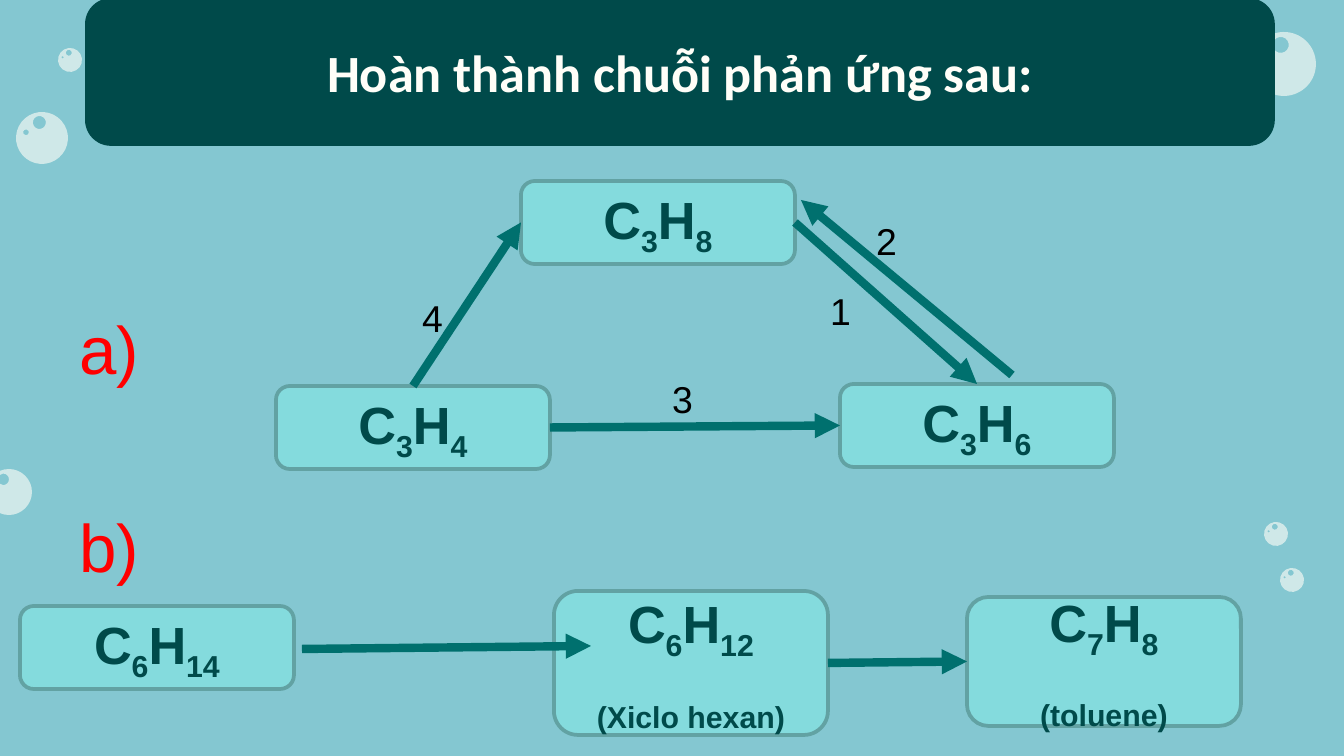
from dataclasses import dataclass
from itertools import groupby

from lxml import etree
from pptx import Presentation
from pptx import util as u
from pptx.dml.color import RGBColor
from pptx.enum import shapes, text
from pptx.oxml.ns import qn

WIDTH, HEIGHT = 1344, 756
SCALE = u.Inches(10) / WIDTH
TOP, LEFT, RIGHT = 0, 1, 3  # connection sites of a rectangle
BOX_WIDTH, BOX_HEIGHT = 274, 83


@dataclass(frozen=True)
class Theme:
    water: str = "84C7D1"
    foam: str = "FFFEF8"
    dark: str = "004A4A"
    box: str = "84DBDD"
    box_edge: str = "62A2A3"
    arrow: str = "00706E"
    number: str = "000000"
    letter: str = "FF0000"
    heading_font: str = "Calibri"
    body_font: str = "Arial"
    formula_size: int = 28
    number_size: int = 20
    letter_size: int = 36
    edge_width: int = 2
    arrow_width: float = 4.5


THEME = Theme()


def px(length):
    return u.Emu(round(length * SCALE))


def paint(color, hex_color):
    color.rgb = RGBColor.from_string(hex_color)


def add_run(paragraph, words, size, color, font=THEME.body_font, bold=False, sub=False):
    run = paragraph.add_run()
    run.text = words
    run.font.size = u.Pt(size)
    run.font.name = font
    run.font.bold = bold
    paint(run.font.color, color)
    if sub:
        run.font._element.set("baseline", "-25000")


def add_label(slide, words, x, y, w, h, size, color):
    frame = slide.shapes.add_textbox(px(x), px(y), px(w), px(h)).text_frame
    frame.word_wrap = True
    add_run(frame.paragraphs[0], words, size, color)


def add_round_box(slide, x, y, w, h, fill, edge):
    box = slide.shapes.add_shape(
        shapes.MSO_SHAPE.ROUNDED_RECTANGLE, px(x), px(y), px(w), px(h))
    box.shadow.inherit = False
    box.fill.solid()
    paint(box.fill.fore_color, fill)
    paint(box.line.color, edge)
    box.line.width = u.Pt(THEME.edge_width)
    box.text_frame.word_wrap = True
    box.text_frame.vertical_anchor = text.MSO_ANCHOR.MIDDLE
    box.text_frame.paragraphs[0].alignment = text.PP_ALIGN.CENTER
    return box


def add_compound(slide, formula, x, y, h=BOX_HEIGHT, name=None):
    """Box with a formula, all but its capitals lowered, and an optional lowered name."""
    compound = add_round_box(slide, x, y, BOX_WIDTH, h, THEME.box, THEME.box_edge)
    frame = compound.text_frame
    lines = [[("".join(part), not capital) for capital, part in groupby(formula, str.isupper)]]
    if name:
        lines.append([(name, True)])
        frame.add_paragraph().alignment = text.PP_ALIGN.CENTER
    for paragraph, parts in zip(frame.paragraphs, lines):
        for words, sub in parts:
            add_run(paragraph, words, THEME.formula_size, THEME.dark, bold=True, sub=sub)
    return compound


def add_arrow(slide, x1=0, y1=0, x2=0, y2=0):
    arrow = slide.shapes.add_connector(
        shapes.MSO_CONNECTOR.STRAIGHT, px(x1), px(y1), px(x2), px(y2))
    paint(arrow.line.color, THEME.arrow)
    arrow.line.width = u.Pt(THEME.arrow_width)
    etree.SubElement(arrow.line._get_or_add_ln(), qn("a:tailEnd"), type="triangle")
    etree.SubElement(arrow._element.spPr, qn("a:effectLst"))
    return arrow


def join(slide, source, source_site, product, product_site):
    arrow = add_arrow(slide)
    arrow.begin_connect(source, source_site)
    arrow.end_connect(product, product_site)


def add_bubble(slide, x, y, radius, turn):
    """Disc with two round holes as highlights, each of four curves."""
    def circle(cx, cy, r):
        quarter = [(1, 0), (1, 0.55), (0.55, 1)]
        points = []
        for _ in range(4):
            points += quarter
            quarter = [(-b, a) for a, b in quarter]
        points.append(points[0])
        return [(px(x + radius * (cx + r * a)), px(y + radius * (cy + r * b)))
                for a, b in points]

    disc, *highlights = circle(0, 0, 1), circle(-0.25, -0.55, 0.25), circle(-0.65, -0.05, 0.11)
    builder = slide.shapes.build_freeform(*disc[0])
    builder.add_line_segments(disc[1:])
    for highlight in highlights:
        builder.move_to(*highlight[0])
        builder.add_line_segments(highlight[1:])
    bubble = builder.convert_to_shape()

    # Turn each three straight steps into one curve
    steps = list(bubble._element.iter(qn("a:lnTo")))
    for first in range(0, len(steps), 3):
        curve = etree.Element(qn("a:cubicBezTo"))
        steps[first].addprevious(curve)
        for step in steps[first:first + 3]:
            curve.append(step[0])
            step.getparent().remove(step)

    bubble.rotation = turn
    bubble.shadow.inherit = False
    bubble.line.fill.background()
    bubble.fill.solid()
    paint(bubble.fill.fore_color, THEME.foam)
    foam = bubble._element.spPr.find(".//" + qn("a:srgbClr"))
    etree.SubElement(foam, qn("a:alpha"), val="61000")


def add_background(slide):
    slide.background.fill.solid()
    paint(slide.background.fill.fore_color, THEME.water)
    for bubble in [(42, 138, 26, 15), (70, 60, 12, 15), (1284, 64, 32, 15),
                   (1276, 534, 12, 15), (1292, 580, 12, 15), (9, 492, 23, 0)]:
        add_bubble(slide, *bubble)


def add_banner(slide, x, y, w, h):
    banner = add_round_box(slide, x, y, w, h, THEME.dark, THEME.dark)
    add_run(banner.text_frame.paragraphs[0], "Hoàn thành chuỗi phản ứng sau:",
            THEME.formula_size, THEME.foam, THEME.heading_font, bold=True)


def add_triangle_chain(slide, x, y):
    """Part a: three compounds in a triangle with numbered steps."""
    propane = add_compound(slide, "C3H8", x + 455, y)
    propene = add_compound(slide, "C3H6", x + 774, y + 203)
    propyne = add_compound(slide, "C3H4", x + 210, y + 205)
    join(slide, propane, RIGHT, propene, TOP)
    add_arrow(slide, x + 946, y + 194, x + 735, y + 19)
    join(slide, propyne, TOP, propane, LEFT)
    join(slide, propyne, RIGHT, propene, LEFT)
    for number, dx, dy in [("4", 343, 108), ("1", 751, 101), ("3", 593, 189), ("2", 797, 31)]:
        add_label(slide, number, x + dx, y + dy, 52, 59, THEME.number_size, THEME.number)
    add_label(slide, "a)", x, y + 120, 145, 95, THEME.letter_size, THEME.letter)


def add_row_chain(slide, x, y):
    """Part b: three compounds in a row."""
    add_compound(slide, "C6H14", x, y + 107)
    cyclohexane = add_compound(slide, "C6H12", x + 534, y + 92, 144, "(Xiclo hexan)")
    toluene = add_compound(slide, "C7H8 (toluene)", x + 947, y + 98, 129)
    add_arrow(slide, x + 282, y + 150, x + 571, y + 147)
    join(slide, cyclohexane, RIGHT, toluene, LEFT)
    add_label(slide, "b)", x + 46, y, 145, 95, THEME.letter_size, THEME.letter)


def main():
    deck = Presentation()
    deck.slide_width, deck.slide_height = px(WIDTH), px(HEIGHT)
    slide = deck.slides.add_slide(deck.slide_layouts[6])
    add_background(slide)
    add_banner(slide, 87, 0, 1186, 144)
    add_triangle_chain(slide, 66, 181)
    add_row_chain(slide, 20, 499)
    deck.save("out.pptx")


if __name__ == "__main__":
    main()
